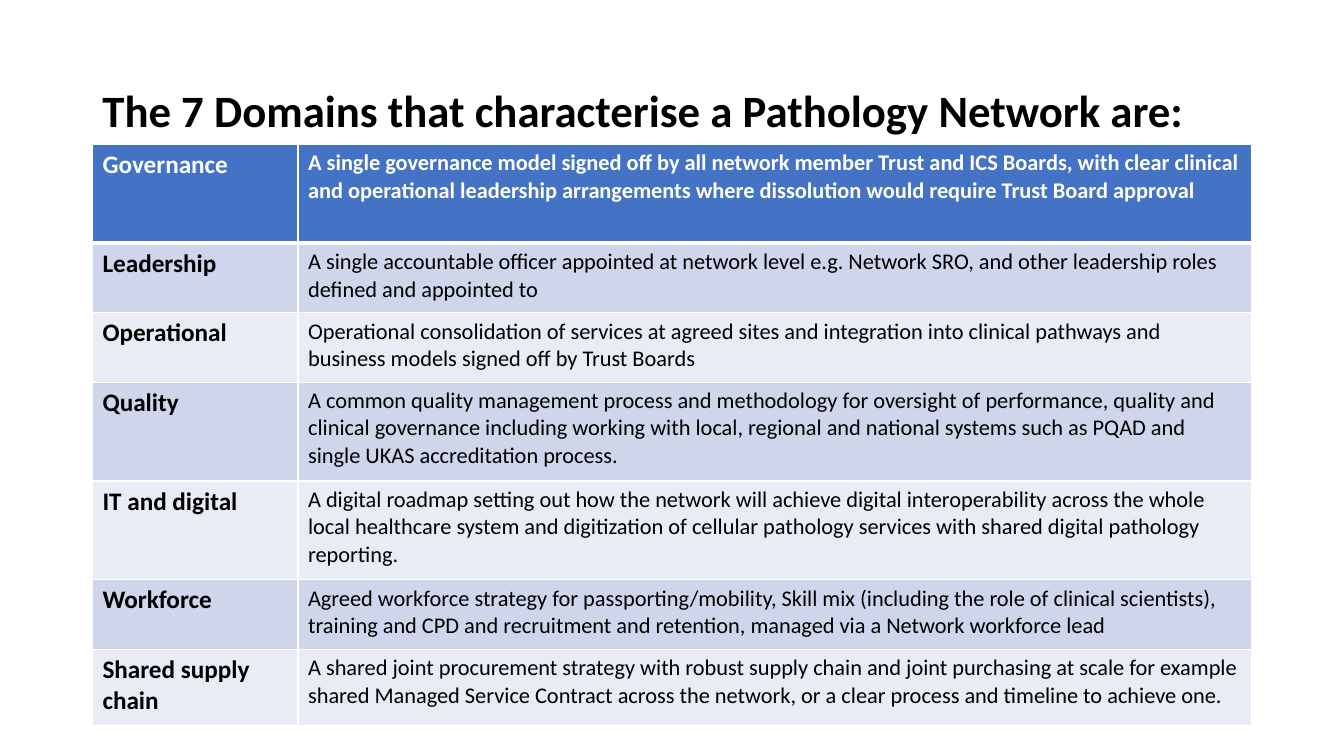
"""Build the slide on the seven domains of a pathology network."""
import pptx
import pptx.dml.color
import pptx.enum.text
import pptx.oxml
import pptx.oxml.ns
import pptx.util

Cm = pptx.util.Cm
Pt = pptx.util.Pt
RGBColor = pptx.dml.color.RGBColor

BLACK = RGBColor(0x00, 0x00, 0x00)
WHITE = RGBColor(0xFF, 0xFF, 0xFF)
BLUE = RGBColor(0x44, 0x72, 0xC4)
BANDS = RGBColor(0xE9, 0xEB, 0xF5), RGBColor(0xCF, 0xD5, 0xEA)

LEFT, WIDTH = Cm(2.33), Cm(29.21)
COLS = 5.18, 24.03
ROWS = [
    (2.49, "Governance", "A single governance model signed off by all network member Trust and ICS Boards, "
     "with clear clinical and operational leadership arrangements where dissolution would require "
     "Trust Board approval"),
    (1.75, "Leadership", "A single accountable officer appointed at network level e.g. Network SRO, "
     "and other leadership roles defined and appointed to"),
    (1.75, "Operational", "Operational consolidation of services at agreed sites and integration into "
     "clinical pathways and business models signed off by Trust Boards"),
    (2.49, "Quality", "A common quality management process and methodology for oversight of performance, "
     "quality and clinical governance including working with local, regional and national systems "
     "such as PQAD and single UKAS accreditation process."),
    (2.49, "IT and digital", "A digital roadmap setting out how the network will achieve digital "
     "interoperability across the whole local healthcare system and digitization of cellular "
     "pathology services with shared digital pathology reporting."),
    (1.75, "Workforce", "Agreed workforce strategy for passporting/mobility, Skill mix (including the "
     "role of clinical scientists), training and CPD and recruitment and retention, managed via a "
     "Network workforce lead"),
    (1.93, "Shared supply chain", "A shared joint procurement strategy with robust supply chain and "
     "joint purchasing at scale for example shared Managed Service Contract across the network, "
     "or a clear process and timeline to achieve one."),
]


class Deck:
    """Holds the style and the current slide."""

    def __init__(self, face):
        self.face = face
        self.show = pptx.Presentation()
        self.show.slide_width, self.show.slide_height = Cm(33.87), Cm(19.05)
        self.slide = self.show.slides.add_slide(self.show.slide_layouts[6])

    def style(self, para, size, color, bold):
        font = para.font
        font.name, font.size, font.bold = self.face, Pt(size), bold
        font.color.rgb = color

    def title(self, text, top, height):
        frame = self.slide.shapes.add_textbox(LEFT, top, WIDTH, height).text_frame
        frame.word_wrap = True
        frame.vertical_anchor = pptx.enum.text.MSO_ANCHOR.MIDDLE
        frame.text = text
        para = frame.paragraphs[0]
        para.line_spacing = 0.9
        self.style(para, 32, BLACK, True)

    def edge(self, cell, side, width):
        cell._tc.get_or_add_tcPr().append(pptx.oxml.parse_xml(
            f'<a:{side} {pptx.oxml.ns.nsdecls("a")} w="{Pt(width)}"><a:solidFill>'
            f'<a:srgbClr val="{WHITE}"/></a:solidFill></a:{side}>'))

    def cell(self, cell, text, size, color, bold, fill, head):
        cell.text = text
        self.style(cell.text_frame.paragraphs[0], size, color, bold)
        for side in ("lnL", "lnR", "lnT", "lnB"):
            self.edge(cell, side, 3 if (side, head) in (("lnB", 0), ("lnT", 1)) else 1)
        cell.fill.solid()
        cell.fill.fore_color.rgb = fill

    def table(self, rows, top):
        high = Cm(sum(row[0] for row in rows))
        grid = self.slide.shapes.add_table(len(rows), len(COLS), LEFT, top, WIDTH, high).table
        for col, wide in zip(grid.columns, COLS):
            col.width = Cm(wide)
        for i, (tall, name, text) in enumerate(rows):
            grid.rows[i].height = Cm(tall)
            color, fill = (BLACK, BANDS[i % 2]) if i else (WHITE, BLUE)
            self.cell(grid.cell(i, 0), name, 18, color, True, fill, i)
            self.cell(grid.cell(i, 1), text, 16, color, i == 0, fill, i)


def main():
    deck = Deck("Calibri")
    deck.title("The 7 Domains that characterise a Pathology Network are:", Cm(1.02), Cm(3.68))
    deck.table(ROWS, Cm(3.64))
    deck.show.save("out.pptx")


if __name__ == "__main__":
    main()
